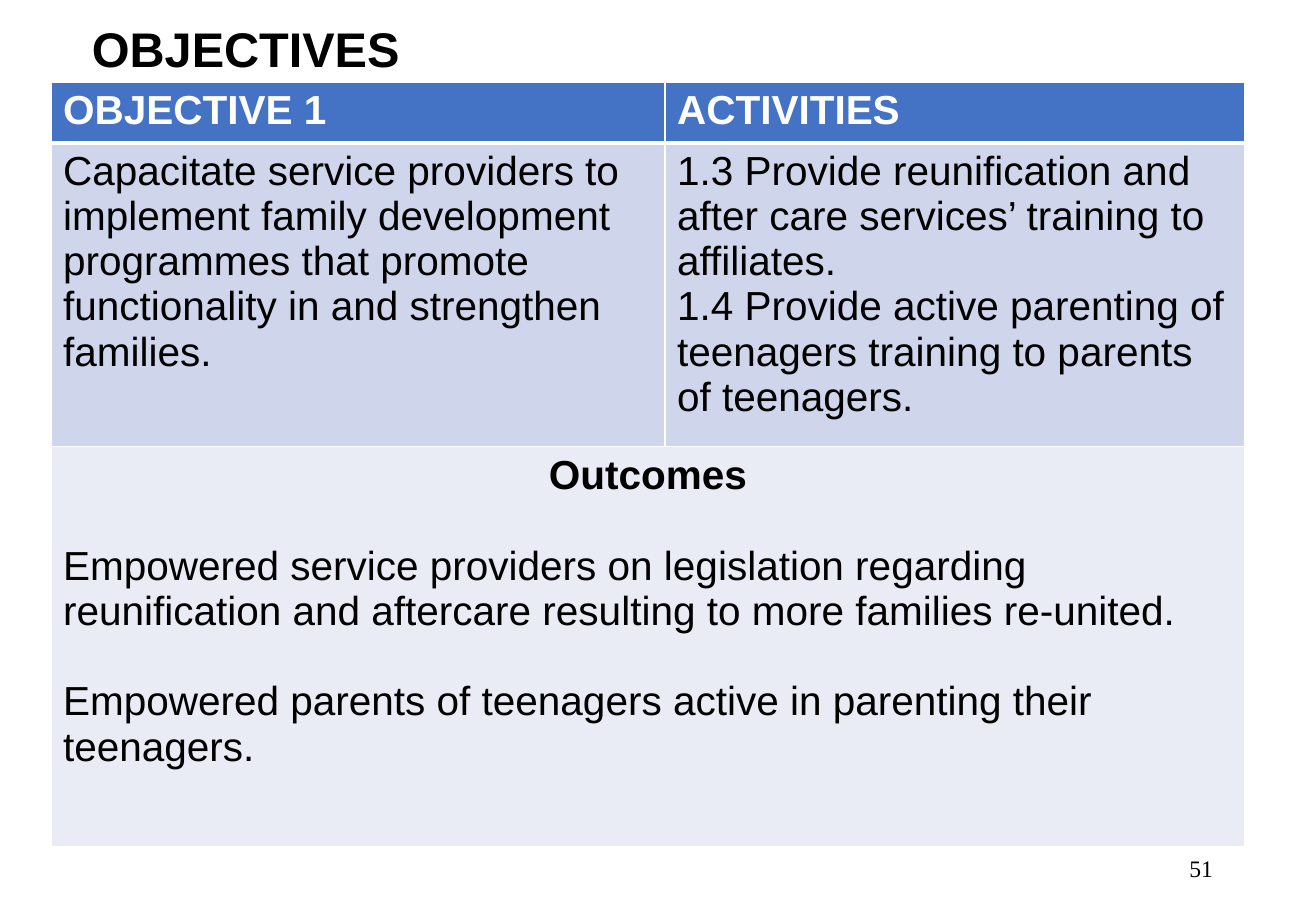
from pptx import Presentation
from pptx.dml.color import RGBColor
from pptx.enum.text import MSO_ANCHOR, PP_ALIGN
from pptx.oxml import parse_xml
from pptx.oxml.ns import nsdecls
from pptx.util import Pt

SCALE = 7526
COLORS = {"ink": "000000", "white": "FFFFFF", "head": "4472C4",
          "band": "CFD5EA", "pale": "E9EBF5"}
LEFT, CENTER, RIGHT = PP_ALIGN.LEFT, PP_ALIGN.CENTER, PP_ALIGN.RIGHT


class Page:
    """Holds the style and the current slide, and draws its elements."""

    def __init__(self, deck, font):
        self.slide = deck.slides.add_slide(deck.slide_layouts[6])
        self.font = font

    def fill_par(self, par, text, size, bold=False, color="ink", align=LEFT,
                 font=None, gap=0):
        par.text = text
        par.alignment = align
        if gap:
            par.space_before = Pt(gap)
        par.font.name = font or self.font
        par.font.size = Pt(size)
        par.font.bold = bold
        par.font.color.rgb = RGBColor.from_string(COLORS[color])

    def label(self, box, text, size, **style):
        frame = self.slide.shapes.add_textbox(*(n * SCALE for n in box)).text_frame
        frame.word_wrap = True
        frame.vertical_anchor = MSO_ANCHOR.MIDDLE
        self.fill_par(frame.paragraphs[0], text, size, **style)

    def table(self, left, top, cols, rows):
        size = (left, top, sum(cols), sum(rows))
        grid = self.slide.shapes.add_table(
            len(rows), len(cols), *(n * SCALE for n in size)).table
        for col, width in zip(grid.columns, cols):
            col.width = width * SCALE
        for row, height in zip(grid.rows, rows):
            row.height = height * SCALE
        return grid

    def cell(self, cell, fill, lines, base=1):
        props = cell._tc.get_or_add_tcPr()
        for side, width in (("L", 1), ("R", 1), ("T", 1), ("B", base)):
            props.append(parse_xml(
                f'<a:ln{side} {nsdecls("a")} w="{Pt(width)}"><a:solidFill>'
                f'<a:srgbClr val="{COLORS["white"]}"/></a:solidFill></a:ln{side}>'))
        cell.fill.solid()
        cell.fill.fore_color.rgb = RGBColor.from_string(COLORS[fill])
        frame = cell.text_frame
        for num, (text, style) in enumerate(lines):
            par = frame.add_paragraph() if num else frame.paragraphs[0]
            self.fill_par(par, text, 24, **style)


def main():
    deck = Presentation()
    deck.slide_width, deck.slide_height = 1316 * SCALE, 911 * SCALE
    page = Page(deck, "Arial")
    page.label((80, 20, 1095, 57), "OBJECTIVES", 28.8, bold=True)
    page.label((929, 844, 296, 49), "51", 14, align=RIGHT, font="Times New Roman")

    grid = page.table(51, 82, (614, 580), (60, 302, 400))
    for col, text in enumerate(("OBJECTIVE 1", "ACTIVITIES")):
        page.cell(grid.cell(0, col), "head",
                  [(text, {"bold": True, "color": "white"})], base=3)
    goal = ["Capacitate service providers to implement family development "
            "programmes that promote functionality in and strengthen families."]
    tasks = ["1.3 Provide reunification and after care services’ training to affiliates.",
             "1.4 Provide active parenting of teenagers training to parents of teenagers."]
    for col, texts in enumerate((goal, tasks)):
        page.cell(grid.cell(1, col), "band", [(text, {}) for text in texts])
    grid.cell(2, 0).merge(grid.cell(2, 1))
    page.cell(grid.cell(2, 0), "pale", [
        ("Outcomes", {"bold": True, "align": CENTER}),
        ("Empowered service providers on legislation regarding reunification "
         "and aftercare resulting to more families re-united.", {"gap": 27}),
        ("Empowered parents of teenagers active in parenting their teenagers.",
         {"gap": 27})])
    deck.save("out.pptx")


if __name__ == "__main__":
    main()
